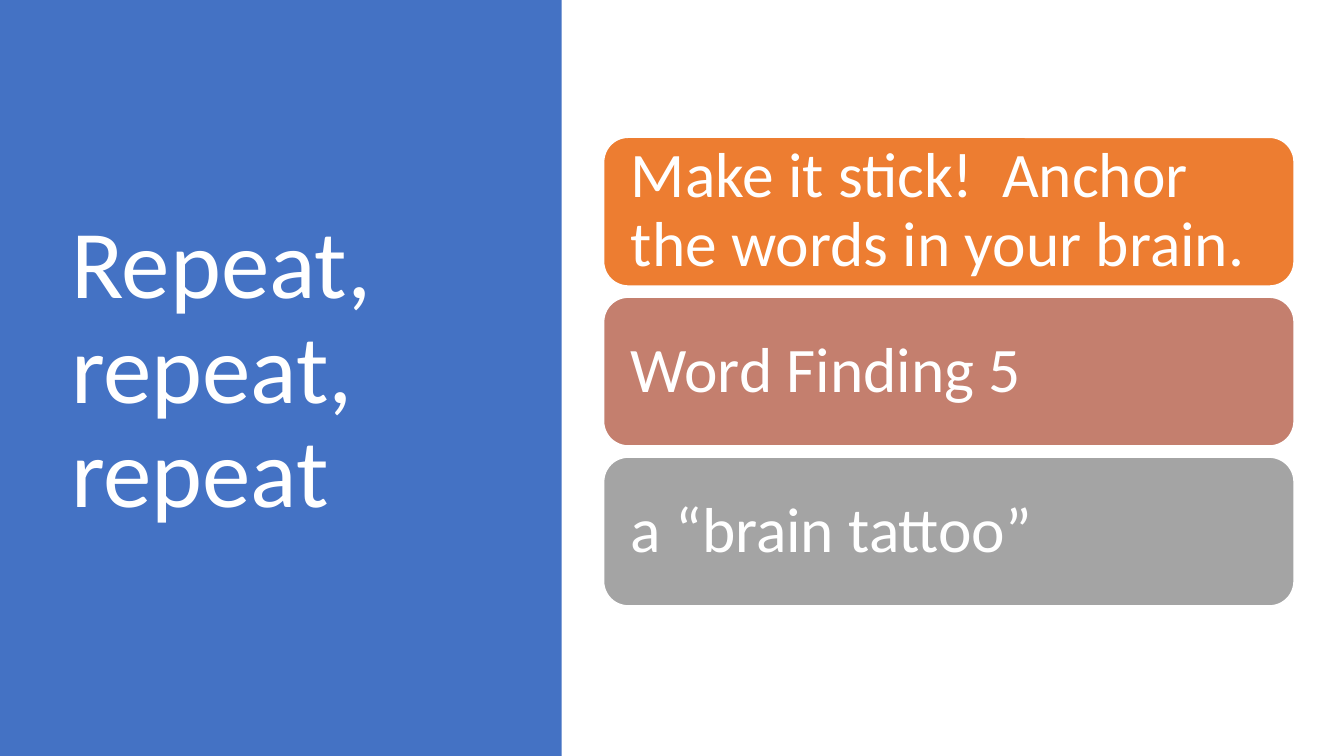
from pptx import Presentation
from pptx import util as u
from pptx.dml.color import RGBColor
from pptx.enum import shapes, text


def paint(fmt, color):
    fmt.solid()
    fmt.fore_color.rgb = RGBColor.from_string(color)


def write(shape, words, size=34, color="FFFFFF", side=0.1, edge=0.05):
    frame = shape.text_frame
    frame.word_wrap = True
    frame.vertical_anchor = text.MSO_ANCHOR.MIDDLE
    frame.margin_left = frame.margin_right = u.Inches(side)
    frame.margin_top = frame.margin_bottom = u.Inches(edge)
    para = frame.paragraphs[0]
    para.alignment = text.PP_ALIGN.LEFT
    para.line_spacing = 0.9
    run = para.add_run()
    run.text = words
    run.font.name = "Calibri"
    run.font.size = u.Pt(size)
    paint(run.font.fill, color)


# Widescreen 16:9 slide
deck = Presentation()
deck.slide_width = u.Inches(10)
deck.slide_height = u.Inches(10 * 9 / 16)
slide = deck.slides.add_slide(deck.slide_layouts[6])

# Blue side panel
panel = slide.shapes.add_shape(shapes.MSO_SHAPE.RECTANGLE, 0, 0,
                               u.Inches(4.18), deck.slide_height)
panel.shadow.inherit = False
paint(panel.fill, "4472C4")
panel.line.fill.background()

# Title
title = slide.shapes.add_textbox(u.Inches(0.43), u.Inches(0.51),
                                 u.Inches(3.12), u.Inches(4.51))
write(title, "Repeat, repeat, repeat", size=52)

# Stacked cards
cards = [
    ("Make it stick!  Anchor the words in your brain.", "ED7D31"),
    ("Word Finding 5", "C47F6E"),
    ("a “brain tattoo”", "A4A4A4"),
]
top, step = 1.02, 1.19
for row, (words, color) in enumerate(cards):
    card = slide.shapes.add_shape(
        shapes.MSO_SHAPE.ROUNDED_RECTANGLE, u.Inches(4.49),
        u.Inches(top + row * step), u.Inches(5.14), u.Inches(1.11))
    card.shadow.inherit = False
    paint(card.fill, color)
    paint(card.line.fill, "FFFFFF")
    card.line.width = u.Pt(1)
    write(card, words, side=0.15, edge=0)

deck.save("out.pptx")
